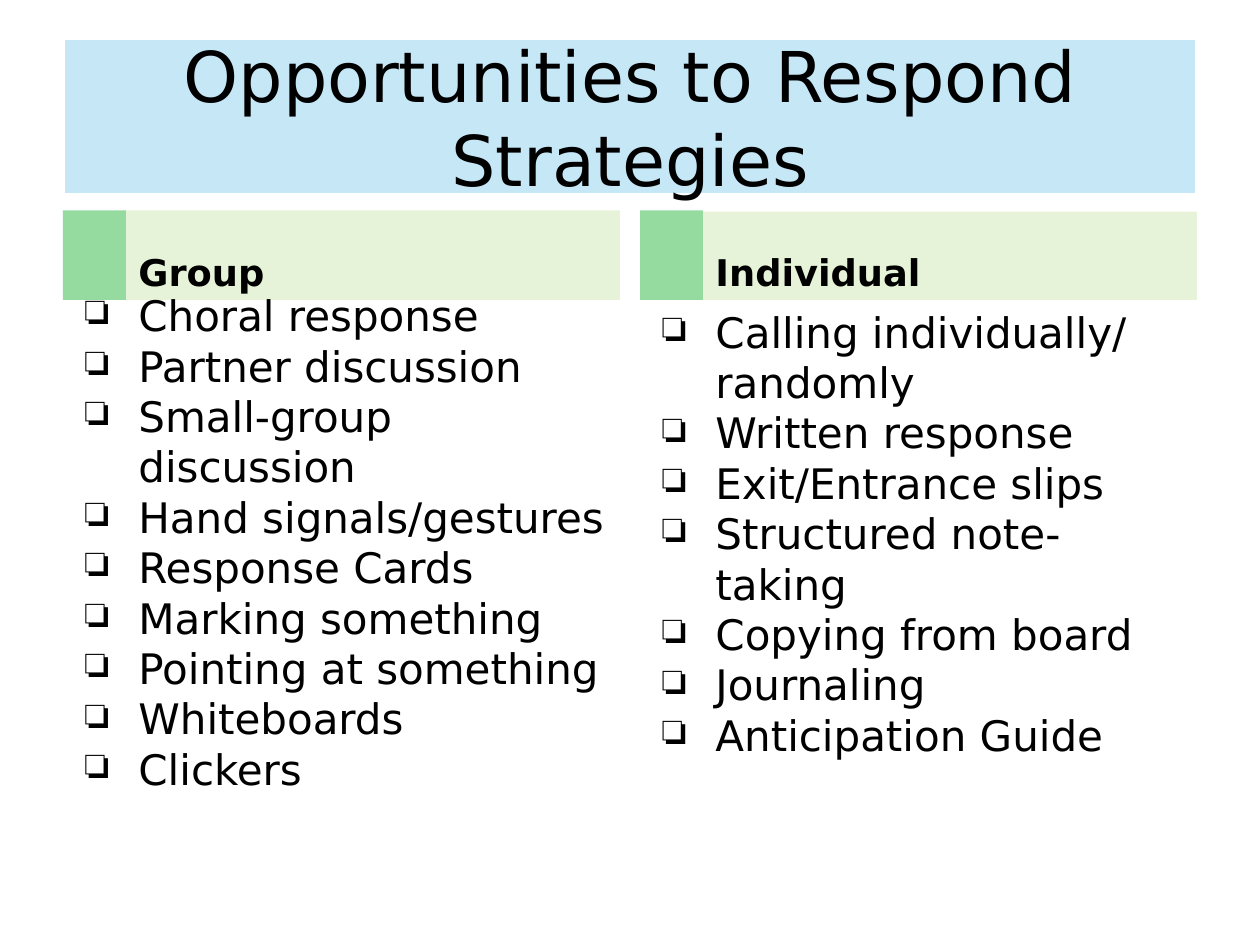
from dataclasses import dataclass

from lxml import etree
from pptx import Presentation
from pptx.dml.color import RGBColor
from pptx.enum import shapes, text
from pptx.oxml import ns
from pptx.util import Inches, Pt

FONT = "DejaVu Sans"
BLACK = "000000"
COLUMN_WIDTH = 4.42
TAB_WIDTH = 0.5
HEADING_BOTTOM = 2.38
LIST_BOTTOM = 6.7


@dataclass
class StrategyColumn:
    heading: str
    left: float
    heading_top: float
    list_top: float
    strategies: list[str]


COLUMNS = [
    StrategyColumn("Group", 0.5, 1.67, 2.25, [
        "Choral response", "Partner discussion", "Small-group discussion",
        "Hand signals/gestures", "Response Cards", "Marking something",
        "Pointing at something", "Whiteboards", "Clickers",
    ]),
    StrategyColumn("Individual", 5.08, 1.68, 2.38, [
        "Calling individually/ randomly", "Written response",
        "Exit/Entrance slips", "Structured note-taking",
        "Copying from board", "Journaling", "Anticipation Guide",
    ]),
]


def color(value: str) -> RGBColor:
    return RGBColor.from_string(value)


def style(paragraph, size: float, bold: bool = False) -> None:
    paragraph.font.name = FONT
    paragraph.font.size = Pt(size)
    paragraph.font.bold = bold
    paragraph.font.color.rgb = color(BLACK)


def add_panel(slide, left: float, top: float, width: float, height: float, fill: str):
    panel = slide.shapes.add_shape(
        shapes.MSO_SHAPE.RECTANGLE, Inches(left), Inches(top), Inches(width), Inches(height))
    panel.shadow.inherit = False
    panel.fill.solid()
    panel.fill.fore_color.rgb = color(fill)
    panel.line.fill.background()
    return panel


def write_label(panel, label: str, size: float, align, anchor, bold: bool = False) -> None:
    frame = panel.text_frame
    frame.word_wrap = True
    frame.vertical_anchor = anchor
    paragraph = frame.paragraphs[0]
    paragraph.text = label
    paragraph.alignment = align
    style(paragraph, size, bold)


def add_title(slide) -> None:
    banner = add_panel(slide, 0.5, 0.3, 9, 1.25, "A9DCF2")
    tint = banner.fill._xPr.find(".//" + ns.qn("a:srgbClr"))
    etree.SubElement(tint, ns.qn("a:alpha"), val="67000")
    banner.line.color.rgb = color("FFFFFF")
    banner.line.width = Pt(2.25)
    write_label(banner, "Opportunities to Respond Strategies", 40,
                text.PP_ALIGN.CENTER, text.MSO_ANCHOR.MIDDLE)


def add_checkbox(paragraph) -> None:
    properties = paragraph._p.get_or_add_pPr()
    properties.set("marL", str(Inches(0.5)))
    properties.set("indent", str(Inches(-0.42)))
    bullet_color = etree.SubElement(properties, ns.qn("a:buClr"))
    etree.SubElement(bullet_color, ns.qn("a:srgbClr"), val=BLACK)
    etree.SubElement(properties, ns.qn("a:buChar"), char="❏")


def add_column(slide, column: StrategyColumn) -> None:
    heading = add_panel(slide, column.left + TAB_WIDTH, column.heading_top,
                        COLUMN_WIDTH - TAB_WIDTH, HEADING_BOTTOM - column.heading_top, "E7F3D8")
    write_label(heading, column.heading, 21, text.PP_ALIGN.LEFT, text.MSO_ANCHOR.BOTTOM, True)

    checklist = slide.shapes.add_textbox(
        Inches(column.left), Inches(column.list_top),
        Inches(COLUMN_WIDTH), Inches(LIST_BOTTOM - column.list_top)).text_frame
    checklist.word_wrap = True
    for index, strategy in enumerate(column.strategies):
        paragraph = checklist.add_paragraph() if index else checklist.paragraphs[0]
        paragraph.text = strategy
        add_checkbox(paragraph)
        style(paragraph, 24)


def main() -> None:
    deck = Presentation()
    deck.slide_width, deck.slide_height = Inches(10), Inches(7.5)
    slide = deck.slides.add_slide(deck.slide_layouts[6])
    for column in COLUMNS:
        add_panel(slide, column.left, 1.67, TAB_WIDTH, 0.71, "95DA9F")
    add_title(slide)
    for column in COLUMNS:
        add_column(slide, column)
    deck.save("out.pptx")


if __name__ == "__main__":
    main()
